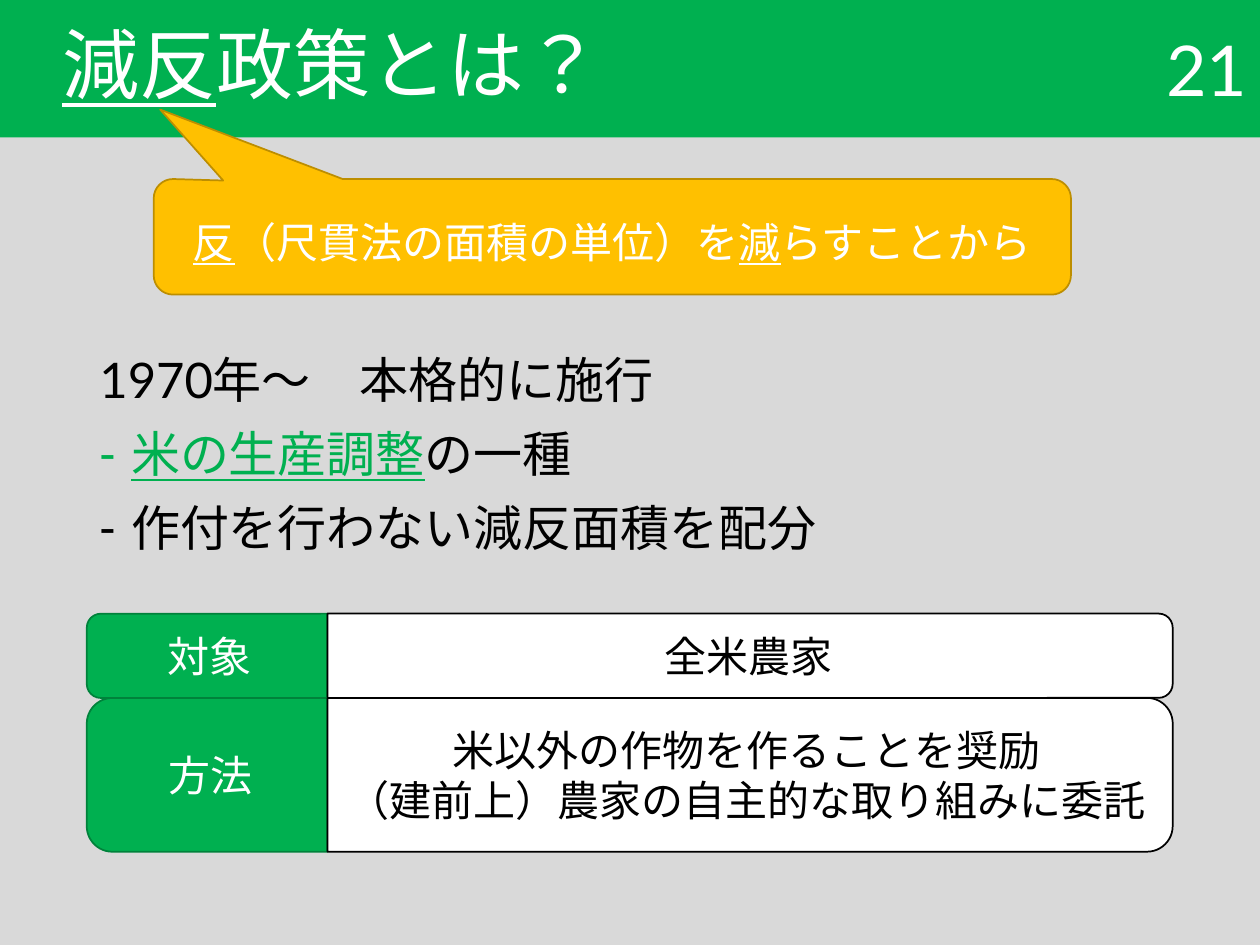
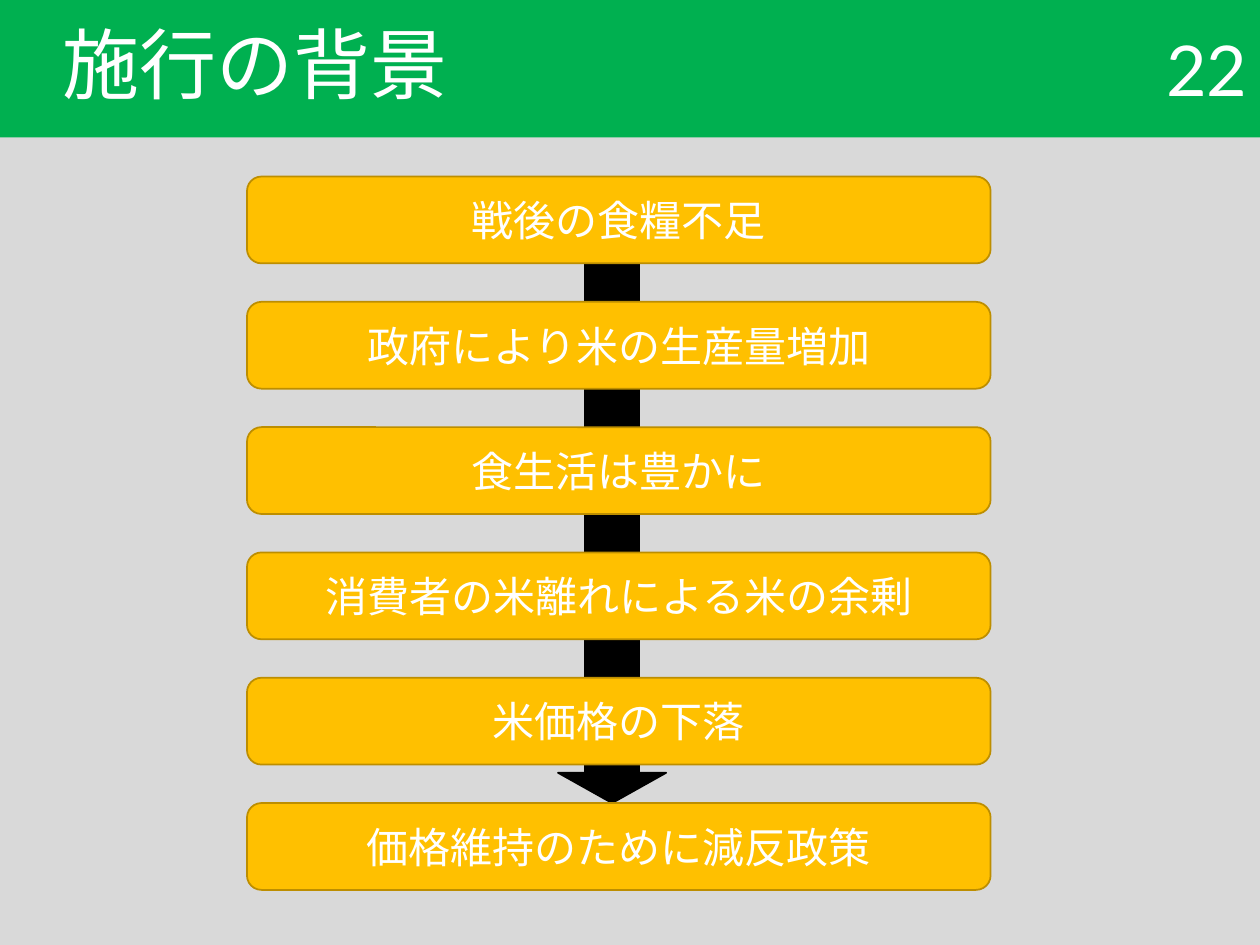
from dataclasses import dataclass
from math import cos, pi, sin

from lxml.etree import SubElement
from pptx import Presentation
from pptx.dml.color import RGBColor
from pptx.enum.lang import MSO_LANGUAGE_ID as Language
from pptx.enum.shapes import MSO_SHAPE as Preset
from pptx.enum.text import MSO_ANCHOR as Anchor, MSO_AUTO_SIZE as AutoSize, PP_ALIGN as Align
from pptx.oxml.ns import qn
from pptx.util import Cm, Pt


@dataclass(frozen=True)
class Theme:
    font: str = "Lato"
    background: str = "D9D9D9"
    green: str = "00B050"
    dark_green: str = "00823B"
    amber: str = "FFC000"
    dark_amber: str = "BD8E00"
    black: str = "000000"
    white: str = "FFFFFF"
    title_size: int = 44
    number_size: int = 40
    body_size: int = 28
    label_size: int = 24


THEME = Theme()
SLIDE_WIDTH, SLIDE_HEIGHT = 25.4, 19.05
BAND_HEIGHT = 2.77
TITLE_LAYOUT, BODY_LAYOUT = 5, 1


def rgb(value):
    return RGBColor.from_string(value)


def place(shape, left, top, width, height):
    shape.left, shape.top, shape.width, shape.height = map(Cm, (left, top, width, height))


def paint(shape, fill, line):
    shape.shadow.inherit = False
    shape.fill.solid()
    shape.fill.fore_color.rgb = rgb(fill)
    shape.line.color.rgb = rgb(line)
    shape.line.width = Pt(1)


def set_list_format(paragraph, margin, hanging, bullet):
    properties = paragraph._p.get_or_add_pPr()
    properties.set("marL", str(Cm(margin)))
    properties.set("indent", str(-Cm(hanging)))
    if bullet:
        SubElement(properties, qn("a:buChar")).set("char", bullet)
    else:
        SubElement(properties, qn("a:buNone"))


def write(paragraph, *runs, size=THEME.label_size, color=THEME.white, align=Align.CENTER,
          line_spacing=None, space_before=None, margin=0, hanging=0, bullet=None):
    """Each run is a string, or a (string, format) pair with color and underline."""
    paragraph.alignment = align
    paragraph.line_spacing = line_spacing
    if space_before is not None:
        paragraph.space_before = Pt(space_before)
    set_list_format(paragraph, margin, hanging, bullet)
    for item in runs:
        text, changes = (item, {}) if isinstance(item, str) else item
        run = paragraph.add_run()
        run.text = text
        font = run.font
        font.name, font.size = THEME.font, Pt(size)
        font.color.rgb = rgb(changes.get("color", color))
        font.underline = changes.get("underline", False)
        font.language_id = Language.JAPANESE


def prepare_frame(shape, anchor=Anchor.MIDDLE):
    frame = shape.text_frame
    frame.word_wrap = True
    frame.auto_size = AutoSize.NONE
    frame.vertical_anchor = anchor
    return frame


def write_lines(shape, lines, **text_format):
    frame = prepare_frame(shape)
    for index, line in enumerate(lines):
        paragraph = frame.add_paragraph() if index else frame.paragraphs[0]
        write(paragraph, line, **text_format)


def add_headed_slide(presentation, layout, number, *title_runs):
    slide = presentation.slides.add_slide(presentation.slide_layouts[layout])
    title = slide.shapes.title
    place(title, 0, 0, SLIDE_WIDTH, BAND_HEIGHT)
    title.fill.solid()
    title.fill.fore_color.rgb = rgb(THEME.green)
    write(prepare_frame(title).paragraphs[0], *title_runs, size=THEME.title_size,
          align=Align.LEFT, line_spacing=0.9, space_before=0, margin=1)
    width = 4.93
    box = slide.shapes.add_textbox(Cm(SLIDE_WIDTH - width), 0, Cm(width), Cm(BAND_HEIGHT))
    write_lines(box, [str(number)], size=THEME.number_size, align=Align.RIGHT)
    return slide


def corner(x, y, radius, start):
    """Points of a quarter circle around (x, y), clockwise from the start angle."""
    angles = [start + step * pi / 16 for step in range(9)]
    return [(x + radius * cos(angle), y + radius * sin(angle)) for angle in angles]


def add_callout(slide, left, top, width, height, *runs):
    """Rounded box with a pointer that rises to the underlined word in the title."""
    radius, rise = 0.39, 1.4
    right, bottom = left + width, top + height
    pointer = [(left + 1.4, top + 0.03), (left + 0.13, top - rise), (left + 3.81, top)]
    outline = (
        corner(left + radius, top + radius, radius, pi)
        + pointer
        + corner(right - radius, top + radius, radius, -pi / 2)
        + corner(right - radius, bottom - radius, radius, 0)
        + corner(left + radius, bottom - radius, radius, pi / 2)
    )
    points = [(Cm(x), Cm(y)) for x, y in outline]
    builder = slide.shapes.build_freeform(*points[0])
    builder.add_line_segments(points[1:], close=True)
    callout = builder.convert_to_shape()
    paint(callout, THEME.amber, THEME.dark_amber)
    frame = prepare_frame(callout)
    frame.margin_top = Cm(rise + 0.3)
    write(frame.paragraphs[0], *runs)


def fill_body(slide, left, top, width, height):
    body = slide.placeholders[1]
    place(body, left, top, width, height)
    frame = prepare_frame(body, Anchor.TOP)
    bullet = dict(margin=0.64, hanging=0.64, bullet="-")
    key_term = ("米の生産調整", dict(color=THEME.green, underline=True))
    entries = [
        (["1970年～　本格的に施行"], {}),
        ([key_term, "の一種"], bullet),
        (["作付を行わない減反面積を配分"], bullet),
    ]
    for index, (runs, list_format) in enumerate(entries):
        paragraph = frame.add_paragraph() if index else frame.paragraphs[0]
        write(paragraph, *runs, size=THEME.body_size, color=THEME.black, align=Align.LEFT,
              line_spacing=0.9, space_before=12, **list_format)


def add_side_tab(slide, left, top, width, height, lines, rotation, direction, fill, line, color):
    """Box rounded on one side: a turned preset whose text is turned back upright."""
    tab = slide.shapes.add_shape(
        Preset.ROUND_2_SAME_RECTANGLE,
        Cm(left + (width - height) / 2), Cm(top + (height - width) / 2), Cm(height), Cm(width))
    tab.rotation = rotation
    paint(tab, fill, line)
    write_lines(tab, lines, color=color)
    tab.text_frame._txBody.bodyPr.set("vert", direction)


def add_fact_rows(slide, left, top, width):
    label_width = 4.85
    rows = [
        (1.7, "対象", ["全米農家"]),
        (3.1, "方法", ["米以外の作物を作ることを奨励", "（建前上）農家の自主的な取り組みに委託"]),
    ]
    for height, label, lines in rows:
        add_side_tab(slide, left, top, label_width, height, [label], 270, "vert",
                     THEME.green, THEME.dark_green, THEME.white)
        add_side_tab(slide, left + label_width, top, width - label_width, height, lines,
                     90, "vert270", THEME.white, THEME.black, THEME.black)
        top += height


def add_flow(slide, left, top, width, height, steps):
    """Equal boxes in a column, over one arrow from the first box to the last."""
    box_height = 1.75
    pitch = (height - box_height) / (len(steps) - 1)
    arrow = slide.shapes.add_shape(
        Preset.DOWN_ARROW, Cm(left + 6.27), Cm(top + box_height),
        Cm(2.18), Cm(height - 2 * box_height))
    arrow.adjustments[0], arrow.adjustments[1] = 0.5, 0.28
    paint(arrow, THEME.black, THEME.black)
    for index, step in enumerate(steps):
        box = slide.shapes.add_shape(
            Preset.ROUNDED_RECTANGLE, Cm(left), Cm(top + index * pitch),
            Cm(width), Cm(box_height))
        paint(box, THEME.amber, THEME.dark_amber)
        write_lines(box, [step])


def build_definition_slide(presentation):
    underlined = dict(underline=True)
    slide = add_headed_slide(presentation, BODY_LAYOUT, 21, ("減反", underlined), "政策とは？")
    fill_body(slide, 1.75, 7.06, 21.89, 10.08)
    add_callout(slide, 3.1, 3.61, 18.49, 2.33, ("反", underlined),
                "（尺貫法の面積の単位）を", ("減", underlined), "らすことから")
    add_fact_rows(slide, 1.75, 12.37, 21.89)


def build_background_slide(presentation):
    slide = add_headed_slide(presentation, TITLE_LAYOUT, 22, "施行の背景")
    add_flow(slide, 4.98, 3.56, 14.99, 14.38, [
        "戦後の食糧不足",
        "政府により米の生産量増加",
        "食生活は豊かに",
        "消費者の米離れによる米の余剰",
        "米価格の下落",
        "価格維持のために減反政策",
    ])


def main():
    presentation = Presentation()
    presentation.slide_width, presentation.slide_height = Cm(SLIDE_WIDTH), Cm(SLIDE_HEIGHT)
    background = presentation.slide_master.background.fill
    background.solid()
    background.fore_color.rgb = rgb(THEME.background)
    build_definition_slide(presentation)
    build_background_slide(presentation)
    presentation.save("out.pptx")


if __name__ == "__main__":
    main()
